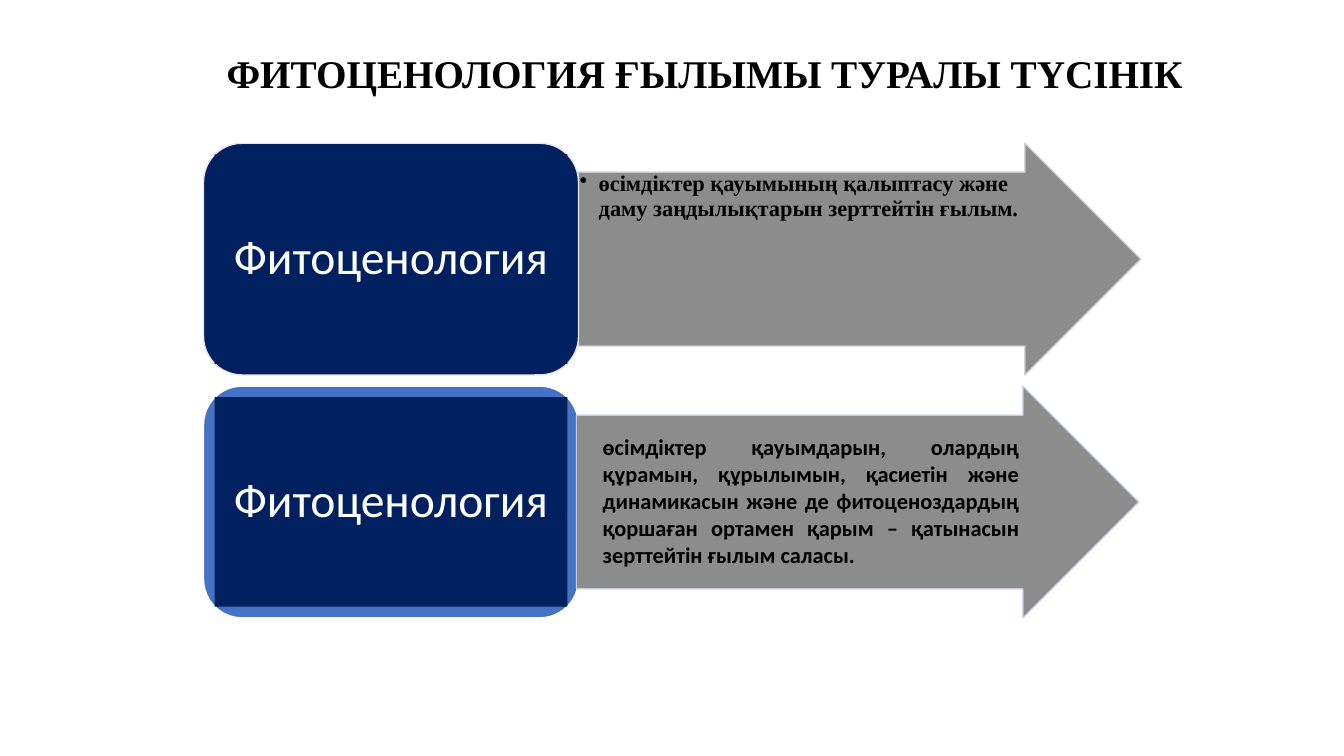
from lxml import etree
from pptx import Presentation
from pptx import util as u
from pptx.dml.color import RGBColor
from pptx.enum import shapes, text
from pptx.oxml import ns

BLACK = RGBColor(0x00, 0x00, 0x00)
WHITE = RGBColor(0xFF, 0xFF, 0xFF)
NAVY = RGBColor(0x00, 0x20, 0x60)
BLUE = RGBColor(0x44, 0x72, 0xC4)
GREY = RGBColor(0x80, 0x80, 0x80)
PALE_GREY = RGBColor(0xE7, 0xE6, 0xE6)
ARROW_EDGE = RGBColor(0xCF, 0xD1, 0xD4)
ARROW_EDGE_BLUE = RGBColor(0xCF, 0xD5, 0xEA)
GOLD = RGBColor(0xBD, 0x8E, 0x00)

SERIF, SANS = "Times New Roman", "Calibri"
TITLE = "ФИТОЦЕНОЛОГИЯ ҒЫЛЫМЫ ТУРАЛЫ ТҮСІНІК"
TERM = "Фитоценология"
FIRST_MEANING = "өсімдіктер қауымының қалыптасу және даму заңдылықтарын зерттейтін ғылым."
SECOND_MEANING = (
    "өсімдіктер қауымдарын, олардың құрамын, құрылымын, қасиетін және "
    "динамикасын және де фитоценоздардың қоршаған ортамен қарым – қатынасын "
    "зерттейтін ғылым саласы."
)

TERM_LEFT, TERM_WIDTH, ROW_HEIGHT = 5.13, 9.45, 5.84
ROW_TOPS = (3.61, 9.73)
INSET = 0.28
ARROW_WIDTH = 14.17


def set_all(target, values):
    for name, value in values.items():
        setattr(target, name, value)


def add_element(parent, tag, **attributes):
    return etree.SubElement(parent, ns.qn(tag), attributes)


class SlideBuilder:
    """Holds the text style and the slide being filled."""

    body_font = {"name": SANS, "size": u.Pt(16), "bold": True}
    term_font = {"name": SANS, "size": u.Pt(34), "bold": False}
    title_font = {"name": SERIF, "size": u.Pt(28), "bold": True}

    def __init__(self, presentation):
        self.slide = presentation.slides.add_slide(presentation.slide_layouts[5])

    def fill_text(self, shape, words, font, color, margins=(0.25, 0.13), bullet=False,
                  anchor=text.MSO_ANCHOR.MIDDLE, **paragraph_format):
        side, edge = (u.Cm(margin) for margin in margins)
        frame = shape.text_frame
        set_all(frame, {
            "word_wrap": True, "auto_size": text.MSO_AUTO_SIZE.NONE,
            "vertical_anchor": anchor, "margin_left": side, "margin_right": side,
            "margin_top": edge, "margin_bottom": edge,
        })
        paragraph = frame.paragraphs[0]
        if bullet:
            properties = paragraph._p.get_or_add_pPr()
            properties.set("marL", str(u.Cm(0.48)))
            properties.set("indent", str(-u.Cm(0.48)))
            add_element(properties, "a:buChar", char="•")
        set_all(paragraph, paragraph_format)
        run = paragraph.add_run()
        run.text = words
        set_all(run.font, font)
        run.font.color.rgb = color
        return run

    def title(self, words, *place):
        shape = self.slide.shapes.title
        set_all(shape, dict(zip(("left", "top", "width", "height"), map(u.Cm, place))))
        run = self.fill_text(shape, words, self.title_font, BLACK,
                             alignment=text.PP_ALIGN.CENTER, line_spacing=0.9)
        outline = etree.Element(ns.qn("a:ln"), {"w": str(u.Pt(0.71))})
        add_element(add_element(outline, "a:solidFill"), "a:srgbClr", val=str(GOLD))
        run._r.get_or_add_rPr().insert(0, outline)

    def shape(self, kind, place, fill, edge=None, opacity=100):
        shape = self.slide.shapes.add_shape(kind, *map(u.Cm, place))
        shape.shadow.inherit = False
        shape.fill.solid()
        shape.fill.fore_color.rgb = fill
        if edge is None:
            shape.line.fill.background()
        else:
            shape.line.color.rgb = edge
            shape.line.width = u.Pt(1)
        if opacity < 100:
            for color in shape._element.spPr.iter(ns.qn("a:srgbClr")):
                add_element(color, "a:alpha", val=str(opacity * 1000))
        return shape

    def arrow(self, left, top, edge):
        arrow = self.shape(shapes.MSO_SHAPE.RIGHT_ARROW,
                           (left, top, ARROW_WIDTH, ROW_HEIGHT), GREY, edge, opacity=90)
        arrow.adjustments[0] = 0.75

    def term_box(self, top, fill, edge):
        self.shape(shapes.MSO_SHAPE.ROUNDED_RECTANGLE,
                   (TERM_LEFT, top, TERM_WIDTH, ROW_HEIGHT), fill, edge)
        label = self.shape(shapes.MSO_SHAPE.RECTANGLE,
                           (TERM_LEFT + INSET, top + INSET,
                            TERM_WIDTH - 2 * INSET, ROW_HEIGHT - 2 * INSET), NAVY)
        self.fill_text(label, TERM, self.term_font, WHITE, margins=(0.36, 0.18),
                       alignment=text.PP_ALIGN.CENTER, line_spacing=0.9)

    def text_box(self, words, place, font=None, **options):
        box = self.slide.shapes.add_textbox(*map(u.Cm, place))
        self.fill_text(box, words, font or self.body_font, BLACK, **options)


def main():
    presentation = Presentation()
    presentation.slide_width, presentation.slide_height = u.Cm(33.87), u.Cm(19.05)
    builder = SlideBuilder(presentation)
    builder.title(TITLE, 3.15, 0.08, 29.21, 3.68)

    first_top, second_top = ROW_TOPS
    builder.arrow(14.58, first_top, ARROW_EDGE)
    builder.text_box(FIRST_MEANING, (14.58, 4.32, 11.96, 4.39),
                     font={**builder.body_font, "name": SERIF},
                     margins=(0.03, 0.03), bullet=True, anchor=text.MSO_ANCHOR.TOP,
                     level=1, line_spacing=0.9)
    builder.term_box(first_top, NAVY, PALE_GREY)

    builder.term_box(second_top, BLUE, WHITE)
    builder.arrow(14.53, second_top, ARROW_EDGE_BLUE)
    builder.text_box(SECOND_MEANING, (14.94, 10.77, 11, 3.68),
                     alignment=text.PP_ALIGN.JUSTIFY)
    presentation.save("out.pptx")


if __name__ == "__main__":
    main()
